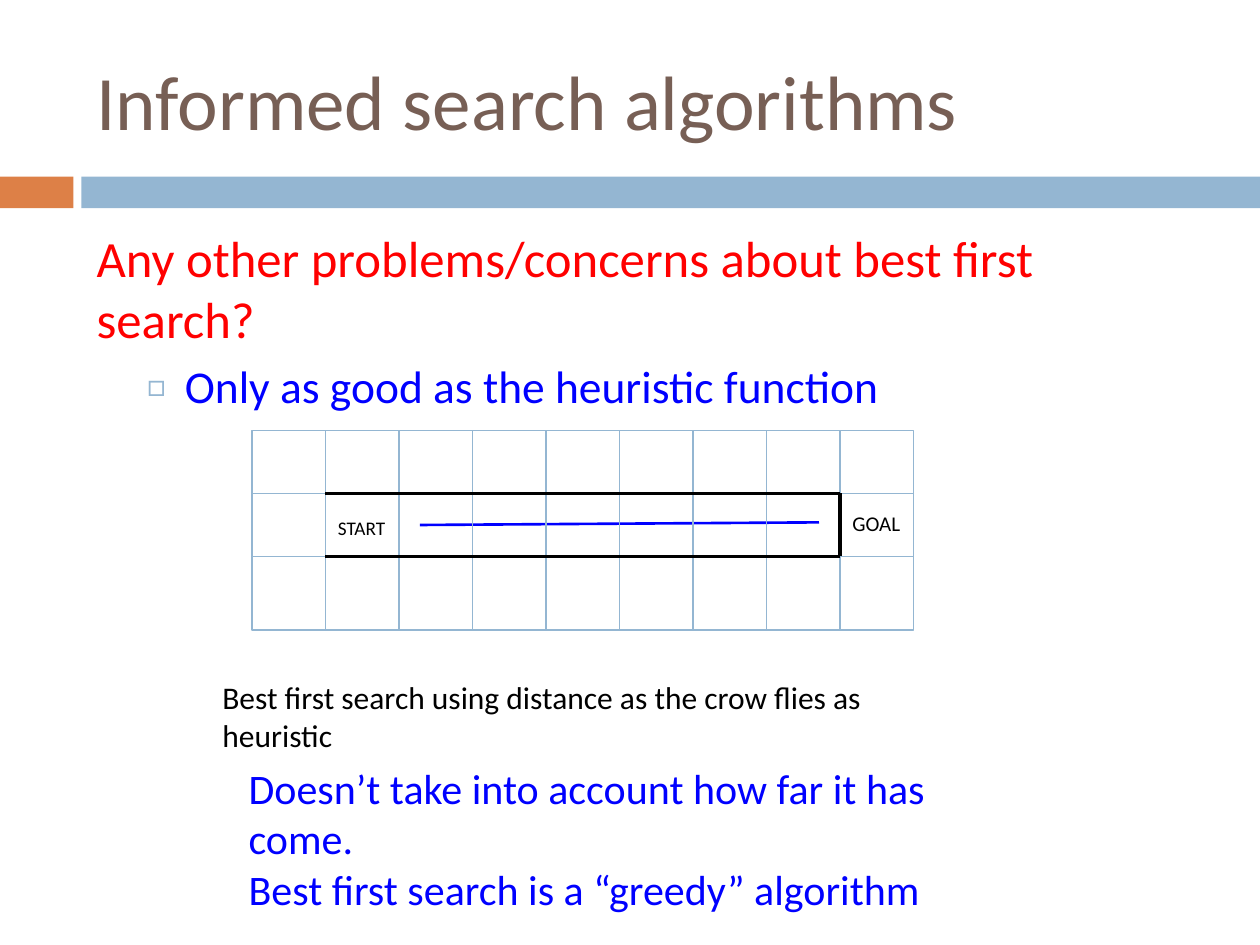
from lxml import etree
from pptx import Presentation
from pptx.dml.color import RGBColor
from pptx.enum import shapes, text
from pptx.oxml import ns
from pptx.util import Pt

HUES = {"brown": "775F55", "orange": "DD8047", "sky": "94B6D2",
        "red": "FF0000", "blue": "0000FF", "black": "000000"}
FONT = "Calibri"

TITLE = "Informed search algorithms"
QUERY = "Any other problems/concerns about best first search?"
POINT = "Only as good as the heuristic function"

# left, top, width, height, colour
BANDS = [(0, 101, 42, 18, "orange"), (46.5, 101, 673.5, 18, "sky")]

# lines, left, top, width, height, size, colour, wrap
NOTES = [
    (["Best first search using distance as the crow flies as heuristic"],
     120, 384, 436, 29, 18, "black", True),
    (["Doesn’t take into account how far it has come.",
      "Best first search is a “greedy” algorithm"],
     135, 432, 460, 65.5, 24, "blue", True),
    (["START"], 186, 291.5, 42, 21, 11, "black", False),
    (["GOAL"], 480, 288, 45, 22, 12, "black", False),
]

# Maze: nine equal columns, three rows
LEFT, STEP, COLS = 144, 42, 9
ROWS = [246, 282, 318, 360]
XS = [LEFT + STEP * i for i in range(COLS + 1)]
ENTRY, WALL = XS[1], XS[8]


def paint(hue):
    return RGBColor.from_string(HUES[hue])


def style(para, size, hue, before=0):
    para.font.name = FONT
    para.font.size = Pt(size)
    para.font.color.rgb = paint(hue)
    para.alignment = text.PP_ALIGN.LEFT
    para.space_before = Pt(before)


def place(shape, left, top, width, height):
    shape.left, shape.top = Pt(left), Pt(top)
    shape.width, shape.height = Pt(width), Pt(height)


def bullet(para, margin, indent, mark=None):
    """Set the indents in points and the bullet sign, or no bullet."""
    props = para._p.get_or_add_pPr()
    props.set("marL", str(Pt(margin)))
    props.set("indent", str(Pt(indent)))

    def add(tag, **attrs):
        return etree.SubElement(props, ns.qn(tag), **attrs)

    if mark is None:
        add("a:buNone")
        return
    etree.SubElement(add("a:buClr"), ns.qn("a:srgbClr"), val=HUES["sky"])
    add("a:buSzPct", val="70000")
    add("a:buFont", typeface=FONT)
    add("a:buChar", char=mark)


def box(slide, left, top, width, height):
    shape = slide.shapes.add_shape(shapes.MSO_SHAPE.RECTANGLE, Pt(left),
                                   Pt(top), Pt(width), Pt(height))
    shape.shadow.inherit = False
    return shape


def rule(slide, x1, y1, x2, y2, hue="sky", weight=1):
    line = slide.shapes.add_connector(shapes.MSO_CONNECTOR.STRAIGHT,
                                      Pt(x1), Pt(y1), Pt(x2), Pt(y2))
    line.line.color.rgb = paint(hue)
    line.line.width = Pt(weight)
    etree.SubElement(line._element.spPr, ns.qn("a:effectLst"))


def note(slide, lines, left, top, width, height, size, hue, wrap):
    label = slide.shapes.add_textbox(Pt(left), Pt(top), Pt(width), Pt(height))
    frame = label.text_frame
    frame.word_wrap = wrap
    frame.text = "\n".join(lines)
    for para in frame.paragraphs:
        style(para, size, hue)


def head(slide):
    title, body = slide.placeholders
    place(title, 48, 18, 642, 78)
    title.text_frame.text = TITLE
    title.text_frame.vertical_anchor = text.MSO_ANCHOR.MIDDLE
    style(title.text_frame.paragraphs[0], 44, "brown")

    place(body, 48, 126, 642, 90)
    frame = body.text_frame
    frame.text = QUERY + "\n" + POINT
    frame.auto_size = text.MSO_AUTO_SIZE.NONE
    query, point = frame.paragraphs
    style(query, 29, "red", 7)
    bullet(query, 0, 0)
    point.level = 1
    style(point, 26, "blue", 5.5)
    bullet(point, 50.4, -21.6, "□")


def maze(slide):
    edge = box(slide, LEFT, ROWS[0], XS[-1] - LEFT, ROWS[-1] - ROWS[0])
    edge.fill.background()
    edge.line.color.rgb = paint("sky")
    edge.line.width = Pt(0.79)
    for x in XS[1:-1]:
        rule(slide, x, ROWS[0], x, ROWS[-1])
    for y in ROWS[1:-1]:
        rule(slide, LEFT, y, XS[-1], y)
    for y in ROWS[1:-1]:
        rule(slide, ENTRY, y, WALL, y, "black", 2.25)
    rule(slide, WALL, ROWS[2], WALL, ROWS[1], "black", 2.25)


def main():
    deck = Presentation()
    deck.slide_width, deck.slide_height = Pt(720), Pt(540)
    slide = deck.slides.add_slide(deck.slide_layouts[1])
    for *area, hue in BANDS:
        band = box(slide, *area)
        band.fill.solid()
        band.fill.fore_color.rgb = paint(hue)
        band.line.fill.background()
    head(slide)
    rule(slide, 240, 300, 468, 298.5, "blue", 1.5)
    for item in NOTES:
        note(slide, *item)
    maze(slide)
    deck.save("out.pptx")


if __name__ == "__main__":
    main()
